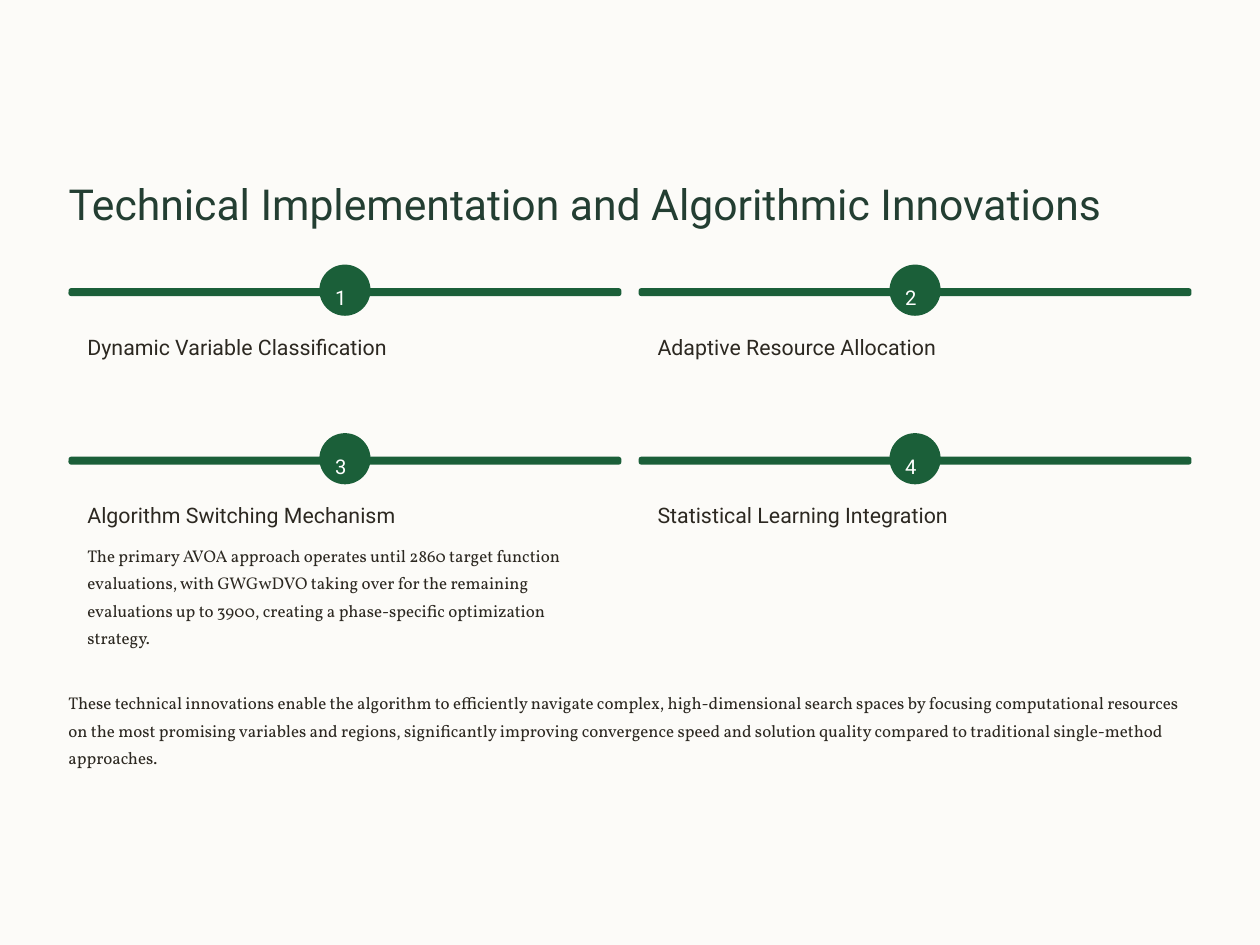
from dataclasses import dataclass

from pptx import Presentation
from pptx.dml.color import RGBColor
from pptx.dml.fill import FillFormat
from pptx.enum.shapes import MSO_SHAPE
from pptx.enum.text import MSO_ANCHOR, MSO_AUTO_SIZE, PP_ALIGN
from pptx.shapes.autoshape import Shape
from pptx.slide import Slide
from pptx.util import Inches, Pt

CREAM, GREEN, DARK_GREEN, BROWN, WHITE = "FCFBF8", "1B5F39", "233E32", "2C2821", "FFFFFF"

MARGIN = 0.87
FIRST_ROW = 3.36
COLUMN_STEP, ROW_STEP = 7.24, 2.14
BAR_WIDTH, BAR_HEIGHT = 7.02, 0.1
BADGE = 0.65
FRAME_FORMAT = {
    "margin_left": 0, "margin_top": 0, "margin_right": 0, "margin_bottom": 0,
    "word_wrap": True, "auto_size": MSO_AUTO_SIZE.NONE, "vertical_anchor": MSO_ANCHOR.TOP,
}


@dataclass(frozen=True)
class TextStyle:
    font: str
    size: float
    line_spacing: float
    colour: str


@dataclass(frozen=True)
class Innovation:
    heading: str
    detail: str = ""


TITLE = TextStyle("Roboto", 39, 48.5, DARK_GREEN)
NUMBER = TextStyle("Roboto", 18.5, 30, WHITE)
HEADING = TextStyle("Roboto", 19.5, 24, BROWN)
BODY = TextStyle("Vollkorn", 15.5, 25, BROWN)

INNOVATIONS = [
    Innovation("Dynamic Variable Classification"),
    Innovation("Adaptive Resource Allocation"),
    Innovation(
        "Algorithm Switching Mechanism",
        "The primary AVOA approach operates until 2860 target function evaluations, "
        "with GWGwDVO taking over for the remaining evaluations up to 3900, "
        "creating a phase-specific optimization strategy.",
    ),
    Innovation("Statistical Learning Integration"),
]
CONCLUSION = (
    "These technical innovations enable the algorithm to efficiently navigate complex, "
    "high-dimensional search spaces by focusing computational resources on the most "
    "promising variables and regions, significantly improving convergence speed and "
    "solution quality compared to traditional single-method approaches."
)


def set_solid(fill: FillFormat, colour: str) -> None:
    fill.solid()
    fill.fore_color.rgb = RGBColor.from_string(colour)


def write_text(box: Shape, text: str, style: TextStyle) -> None:
    frame = box.text_frame
    for name, value in FRAME_FORMAT.items():
        setattr(frame, name, value)
    para = frame.paragraphs[0]
    para.alignment = PP_ALIGN.LEFT
    para.line_spacing = Pt(style.line_spacing)
    span = para.add_run()
    span.text = text
    span.font.name = style.font
    span.font.size = Pt(style.size)
    set_solid(span.font.fill, style.colour)


def add_text(page: Slide, left: float, top: float, width: float, height: float,
             text: str, style: TextStyle) -> None:
    box = page.shapes.add_textbox(Inches(left), Inches(top), Inches(width), Inches(height))
    write_text(box, text, style)


def add_green_shape(page: Slide, kind: MSO_SHAPE, left: float, top: float,
                    width: float, height: float) -> Shape:
    shape = page.shapes.add_shape(kind, Inches(left), Inches(top), Inches(width), Inches(height))
    shape.shadow.inherit = False
    set_solid(shape.fill, GREEN)
    shape.line.fill.background()
    return shape


def add_innovation(page: Slide, index: int, innovation: Innovation) -> None:
    row, column = divmod(index, 2)
    left = MARGIN + column * COLUMN_STEP
    top = FIRST_ROW + row * ROW_STEP
    badge_left = left + (BAR_WIDTH - BADGE) / 2
    bar = add_green_shape(page, MSO_SHAPE.ROUNDED_RECTANGLE, left, top + 0.3, BAR_WIDTH, BAR_HEIGHT)
    bar.adjustments[0] = 0.33
    add_green_shape(page, MSO_SHAPE.OVAL, badge_left, top, BADGE, BADGE)
    add_text(page, badge_left + 0.2, top + 0.16, 0.26, 0.33, str(index + 1), NUMBER)
    add_text(page, left + 0.24, top + 0.87, 6.54, 0.34, innovation.heading, HEADING)
    if innovation.detail:
        add_text(page, left + 0.24, top + 1.34, 6.54, 1.39, innovation.detail, BODY)


def main() -> None:
    deck = Presentation()
    deck.slide_width, deck.slide_height = Inches(16), Inches(12)
    page = deck.slides.add_slide(deck.slide_layouts[5])
    set_solid(page.background.fill, CREAM)

    title = page.shapes.title
    title.left, title.top = Inches(MARGIN), Inches(2.24)
    title.width, title.height = Inches(13.43), Inches(0.68)
    write_text(title, "Technical Implementation and Algorithmic Innovations", TITLE)

    for index, innovation in enumerate(INNOVATIONS):
        add_innovation(page, index, innovation)
    add_text(page, MARGIN, 8.71, 14.26, 1.04, CONCLUSION, BODY)
    deck.save("out.pptx")


if __name__ == "__main__":
    main()
